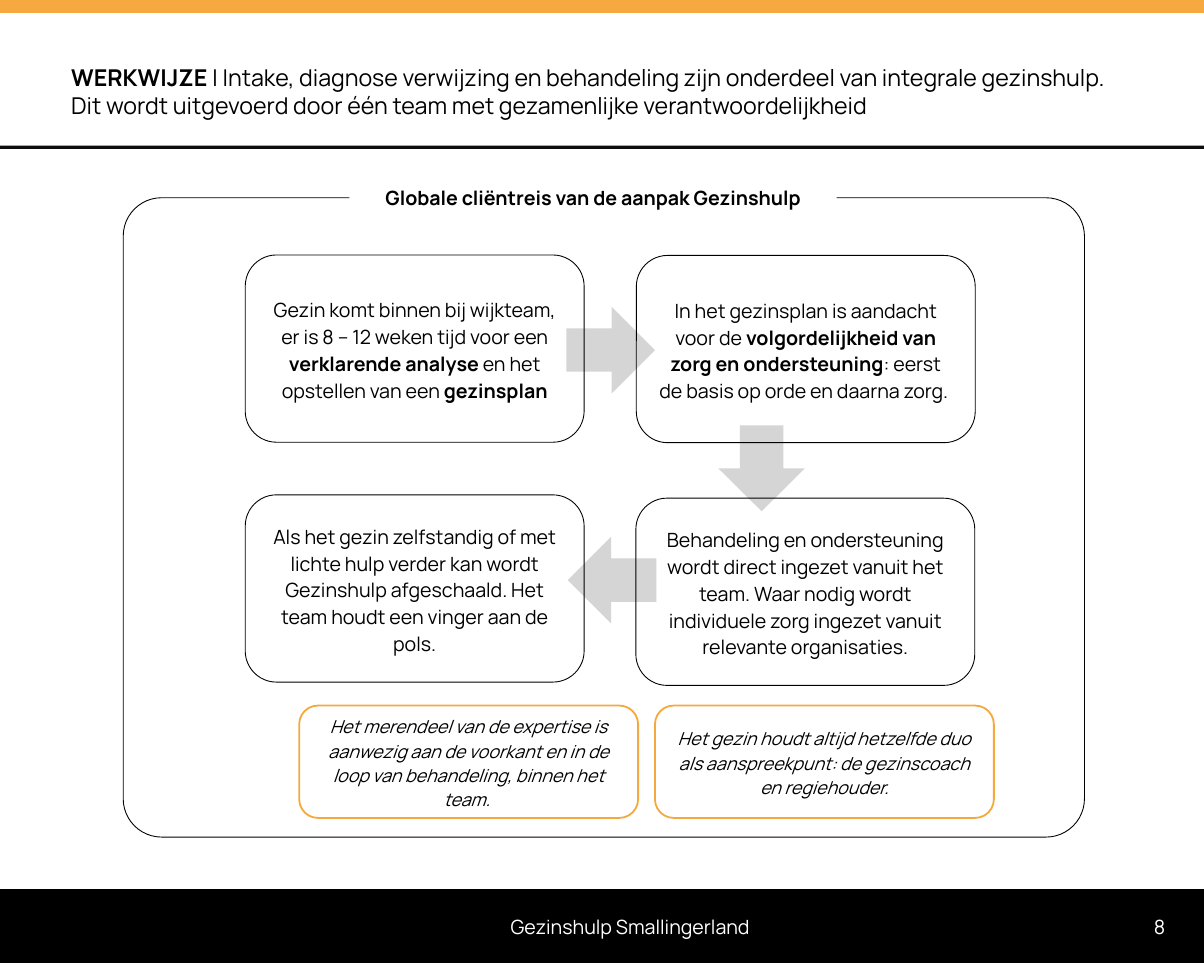
from dataclasses import dataclass

import pptx
import pptx.dml.color
import pptx.enum.shapes
import pptx.enum.text
import pptx.util

Pt = pptx.util.Pt
RGB = pptx.dml.color.RGBColor.from_string
SHAPE = pptx.enum.shapes.MSO_SHAPE
ALIGN = pptx.enum.text.PP_ALIGN
ANCHOR = pptx.enum.text.MSO_ANCHOR


@dataclass(frozen=True)
class Theme:
    font: str = "Manrope"
    orange: str = "F5A93F"
    note_line: str = "F4A93F"
    rule: str = "0D0D0D"
    black: str = "000000"
    white: str = "FFFFFF"
    arrow: str = "D5D5D5"
    title_size: float = 26
    body_size: float = 22
    note_size: float = 20


THEME = Theme()
WIDTH, HEIGHT = 1350, 1080
CARD_W, CARD_H, NOTE_H = 380, 210, 126

# Cards in reading order of the journey: left, top, runs of (text, bold)
CARDS = [
    (275, 286, [("Gezin komt binnen bij wijkteam, er is 8 – 12 weken tijd voor een ", False),
                ("verklarende analyse ", True),
                ("en het opstellen van een ", False),
                ("gezinsplan", True)]),
    (713.5, 286.5, [("In het gezinsplan is aandacht voor de ", False),
                    ("volgordelijkheid van zorg en ondersteuning", True),
                    (": eerst de basis op orde en daarna zorg. ", False)]),
    (713, 558.7, [("Behandeling en ondersteuning wordt direct ingezet vanuit het team. "
                   "Waar nodig wordt individuele zorg ingezet vanuit relevante "
                   "organisaties.", False)]),
    (275, 555, [("Als het gezin zelfstandig of met lichte hulp verder kan wordt "
                 "Gezinshulp afgeschaald. Het team houdt een vinger aan de pols.", False)]),
]
# Arrows: left, top, width, rotation
ARROWS = [(636.5, 602, 99.4, 180), (805.7, 476.6, 96.5, 90), (635, 344, 99.4, 0)]
ARROW_H = 97.2
NOTES = [
    (335.5, "Het merendeel van de expertise is aanwezig aan de voorkant en in de "
            "loop van behandeling, binnen het team. "),
    (734.4, "Het gezin houdt altijd hetzelfde duo als aanspreekpunt: de gezinscoach "
            "en regiehouder."),
]
NOTE_TOP = 791.3


def set_all(obj, values):
    for name, value in values.items():
        setattr(obj, name, value)


def write(sp, runs, size, color=THEME.black, italic=None, align=ALIGN.CENTER,
          anchor=ANCHOR.MIDDLE, spacing=1.0, inset=(7.2, 7.2)):
    """Fill a shape with one paragraph of (text, bold) runs; inset is (sides, top and bottom)."""
    side, edge = (Pt(v) for v in inset)
    tf = sp.text_frame
    set_all(tf, {"word_wrap": True, "vertical_anchor": anchor,
                 "margin_left": side, "margin_right": side,
                 "margin_top": edge, "margin_bottom": edge})
    p = tf.paragraphs[0]
    set_all(p, {"alignment": align, "line_spacing": spacing})
    for text, bold in runs:
        r = p.add_run()
        r.text = text
        set_all(r.font, {"name": THEME.font, "size": Pt(size), "bold": bold, "italic": italic})
        r.font.color.rgb = RGB(color)


def add_box(s, kind, box, fill=None, line=None, weight=1):
    sp = s.shapes.add_shape(kind, *(Pt(v) for v in box))
    sp.shadow.inherit = False
    if fill:
        sp.fill.solid()
        sp.fill.fore_color.rgb = RGB(fill)
    else:
        sp.fill.background()
    if line:
        sp.line.color.rgb = RGB(line)
        sp.line.width = Pt(weight)
    else:
        sp.line.fill.background()
    return sp


def add_text(s, box, runs, size, **style):
    write(s.shapes.add_textbox(*(Pt(v) for v in box)), runs, size, **style)


def write_centred(sp, runs, size, italic=None):
    write(sp, runs, size, italic=italic, spacing=1.14, inset=(14.4, 0))


def add_page_frame(s):
    for top, height, fill in [(0, 14.4, THEME.orange), (163.4, 3.6, THEME.rule),
                              (997.2, 82.8, THEME.black)]:
        add_box(s, SHAPE.RECTANGLE, (0, top, WIDTH, height), fill)
    for left, width, text in [(1264.3, 72, "8"), (447, 519, "Gezinshulp Smallingerland")]:
        add_text(s, (left, 1010, width, 57.6), [(text, False)], THEME.body_size,
                 color=THEME.white)


def add_title(s):
    add_text(s, (72.7, 64, 1204.6, 68.4),
             [("WERKWIJZE", True),
              (" | Intake, diagnose verwijzing en behandeling zijn onderdeel van integrale "
               "gezinshulp. Dit wordt uitgevoerd door één team met gezamenlijke "
               "verantwoordelijkheid", False)],
             THEME.title_size, align=ALIGN.LEFT, anchor=ANCHOR.TOP)


def add_journey(s):
    for left, top, width, rotation in ARROWS:
        sp = add_box(s, SHAPE.RIGHT_ARROW, (left, top, width, ARROW_H), THEME.arrow)
        sp.rotation = rotation
    for left, top, runs in CARDS:
        sp = add_box(s, SHAPE.ROUNDED_RECTANGLE, (left, top, CARD_W, CARD_H), line=THEME.black)
        write_centred(sp, runs, THEME.body_size)


def add_panel(s):
    sp = add_box(s, SHAPE.ROUNDED_RECTANGLE, (138.2, 221.8, 1077.8, 717), line=THEME.black)
    sp.adjustments[0] = 0.06


def add_notes(s):
    for left, text in NOTES:
        sp = add_box(s, SHAPE.ROUNDED_RECTANGLE, (left, NOTE_TOP, CARD_W, NOTE_H),
                     THEME.white, THEME.note_line, 2)
        write_centred(sp, [(text, False)], THEME.note_size, italic=True)


def add_panel_heading(s):
    sp = add_box(s, SHAPE.RECTANGLE, (391.7, 208, 546.5, 23.8), THEME.white)
    write_centred(sp, [("Globale cliëntreis van de aanpak Gezinshulp", True)],
                  THEME.body_size)


def main():
    prs = pptx.Presentation()
    set_all(prs, {"slide_width": Pt(WIDTH), "slide_height": Pt(HEIGHT)})
    s = prs.slides.add_slide(prs.slide_layouts[6])
    add_page_frame(s)
    add_title(s)
    add_journey(s)
    add_panel(s)
    add_notes(s)
    add_panel_heading(s)
    prs.save("out.pptx")


if __name__ == "__main__":
    main()
